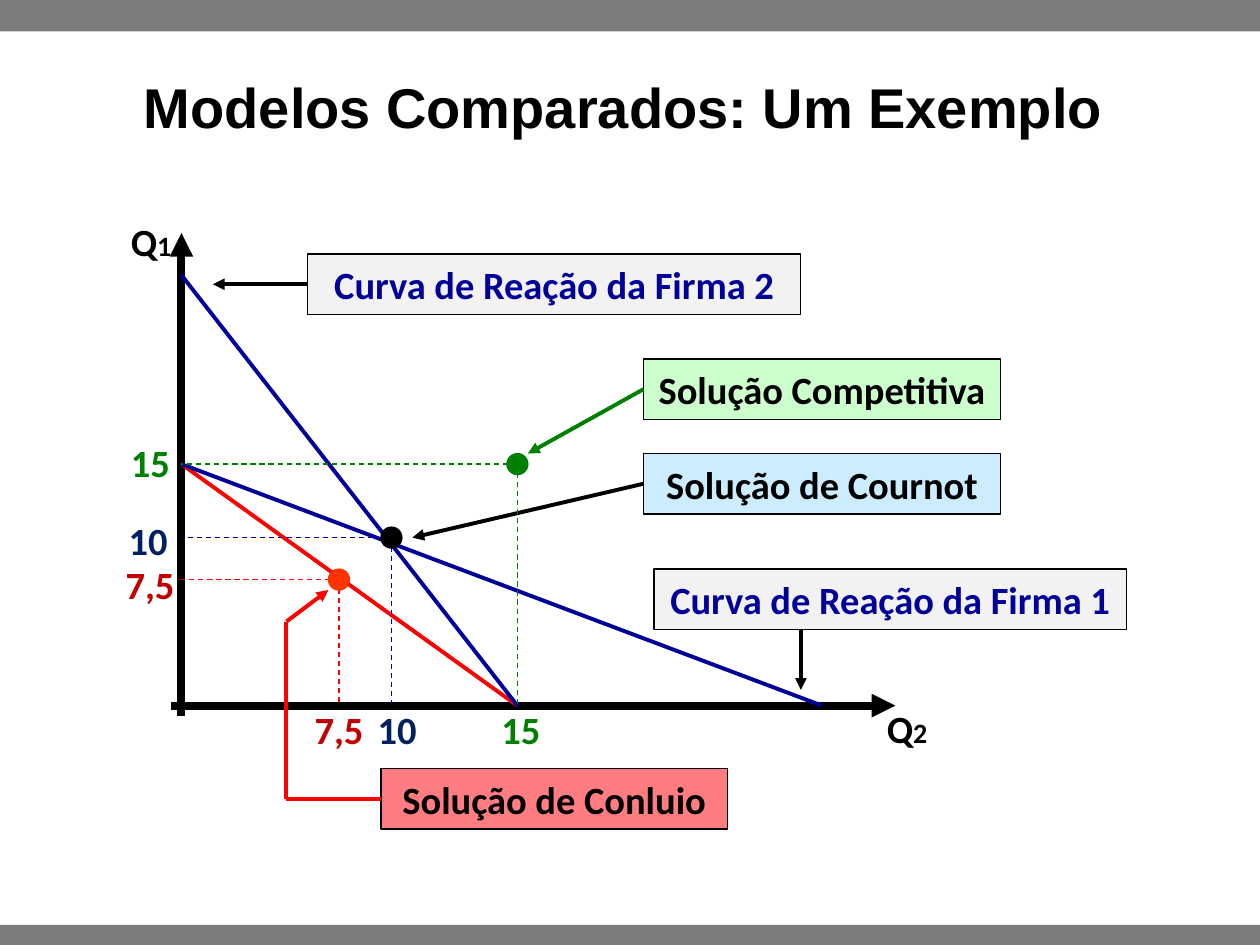
from pptx import Presentation
from pptx.util import Inches, Pt
from pptx.dml.color import RGBColor
from pptx.enum.dml import MSO_LINE
from pptx.enum.shapes import MSO_CONNECTOR, MSO_SHAPE
from pptx.enum.text import MSO_ANCHOR, PP_ALIGN
from pptx.oxml.ns import qn
from lxml import etree

LINE = MSO_CONNECTOR.STRAIGHT
RECT, OVAL = MSO_SHAPE.RECTANGLE, MSO_SHAPE.OVAL
MID, MIDDLE = PP_ALIGN.CENTER, MSO_ANCHOR.MIDDLE
LEFT = PP_ALIGN.LEFT
DASH = MSO_LINE.DASH


class Theme:
    head, body = "Arial", "Calibri"
    title, text, sub = 32, 22, 16
    axis, curve, thin = 4.5, 2.25, 0.75
    black, bar, red, blue, green = "000000", "7C7C7C", "FF0000", "000099", "008000"
    wine, navy, ember = "C00000", "002060", "FF3300"
    gray, sky, mint, rose = "F2F2F2", "CCECFF", "CCFFCC", "FF7C80"


T = Theme
WIDE, HIGH = 10, 7.5
CELL = WIDE / 120
ZERO = (1.44, 5.6)
BOX, LABEL = 5.75, (9, 5.6)

TITLE = "Modelos Comparados: Um Exemplo"
AXES = [((0, -1), (0, 45)), ((-1, 0), (68, 0))]
NAMES = [("Q", "1", (-6, 47)), ("Q", "2", (66, 0.7))]
BARS = [(0, 0.25), (7.34, 0.16)]
MODELS = [
    dict(point=(15, 12), dot=T.ember, dash=T.red, ink=T.wine, mark="7,5",
         marks=[(11.5, 0.6), (-6.5, 14.4)],
         curves=[((0, 23), (32, 0))], curve=T.red,
         boxes=[("Solução de Conluio", (19, -6), 33, T.rose, T.black)],
         arrows=[(T.red, [(10, -6 - BOX / 2), (10, 8), (14, 11)])]),
    dict(point=(20, 16), dot=T.black, dash=T.blue, ink=T.navy, mark="10",
         marks=[(17.5, 0.6), (-6.2, 18.6)],
         curves=[((0, 41), (32, 0)), ((0, 23), (61, 0))], curve=T.blue,
         boxes=[("Solução de Cournot", (44, 24), 34, T.sky, T.black),
                ("Curva de Reação da Firma 2", (12, 43), 47, T.gray, T.blue)],
         arrows=[(T.black, [(22, 16)]), (T.black, [(3, 43 - BOX / 2)])]),
    dict(point=(32, 23), dot=T.green, dash=T.green, ink=T.green, mark="15",
         marks=[(29.3, 0.6), (-6, 26)], curves=[], curve=T.green,
         boxes=[("Solução Competitiva", (44, 33), 34, T.mint, T.black)],
         arrows=[(T.green, [(33, 24)])]),
]
FIRM = ("Curva de Reação da Firma 1", (45, 13), 45, T.gray, T.blue)
DROP = (59, 13 - BOX), (59, 1.5)

deck = Presentation()
deck.slide_width, deck.slide_height = Inches(WIDE), Inches(HIGH)
slide = deck.slides.add_slide(deck.slide_layouts[6])
shapes = slide.shapes


def rgb(code):
    return RGBColor.from_string(code)


def place(spot):
    col, row = spot
    return Inches(ZERO[0] + col * CELL), Inches(ZERO[1] - row * CELL)


def span(*cells):
    return [Inches(n * CELL) for n in cells]


def write(shape, runs, align=LEFT, face=T.body):
    frame = shape.text_frame
    frame.word_wrap = True
    frame.vertical_anchor = MIDDLE
    para = frame.paragraphs[0]
    para.alignment = align
    for text, size, ink in runs:
        run = para.add_run()
        run.text = text
        run.font.name, run.font.size, run.font.bold = face, Pt(size), True
        run.font.color.rgb = rgb(ink)


def label(spot, runs):
    write(shapes.add_textbox(*place(spot), *span(*LABEL)), runs)


def solid(kind, area, fill, edge=None):
    shape = shapes.add_shape(kind, *area)
    shape.shadow.inherit = False
    shape.fill.solid()
    shape.fill.fore_color.rgb = rgb(fill)
    if edge:
        shape.line.color.rgb = rgb(edge)
        shape.line.width = Pt(T.thin)
    else:
        shape.line.fill.background()
    return shape


def draw(start, end, ink, width, head=False, dash=False):
    line = shapes.add_connector(LINE, *place(start), *place(end))
    line.line.color.rgb = rgb(ink)
    line.line.width = Pt(width)
    if dash:
        line.line.dash_style = DASH
    if head:
        etree.SubElement(line.line._get_or_add_ln(), qn("a:tailEnd"), type="triangle")
    etree.SubElement(line._element.spPr, qn("a:effectLst"))
    return line


def panel(text, spot, wide, fill, ink):
    box = solid(RECT, (*place(spot), *span(wide, BOX)), fill, T.black)
    write(box, [(text, T.text, ink)], MID)
    return box


def lead(box, start, ink, stops):
    for i, stop in enumerate(stops):
        line = draw(start, stop, ink, T.curve, head=stop == stops[-1])
        if i == 0:
            line.begin_connect(box, 1)
        start = stop


for top, tall in BARS:
    solid(RECT, (0, Inches(top), Inches(WIDE), Inches(tall)), T.bar)
for start, end in AXES:
    draw(start, end, T.black, T.axis, head=True)
for name, sub, spot in NAMES:
    label(spot, [(name, T.text, T.black), (sub, T.sub, T.black)])

for model in MODELS:
    col, row = model["point"]
    for start, end in model["curves"]:
        draw(start, end, model["curve"], T.curve)
    for foot in ((col, 0), (0, row)):
        draw((col, row), foot, model["dash"], T.thin, dash=True)
    for spot in model["marks"]:
        label(spot, [(model["mark"], T.text, model["ink"])])
    for item, (ink, stops) in zip(model["boxes"], model["arrows"]):
        x, y = item[1]
        lead(panel(*item), (x, y - BOX / 2), ink, stops)
    solid(OVAL, (*place((col - 1, row + 1)), *span(2, 2)), model["dot"], model["dot"])

draw(*DROP, T.black, T.curve, head=True)
panel(*FIRM)
head = shapes.add_textbox(Inches(0.33), Inches(0.26), Inches(9.24), Inches(1.17))
write(head, [(TITLE, T.title, T.black)], MID, T.head)

deck.save("out.pptx")
